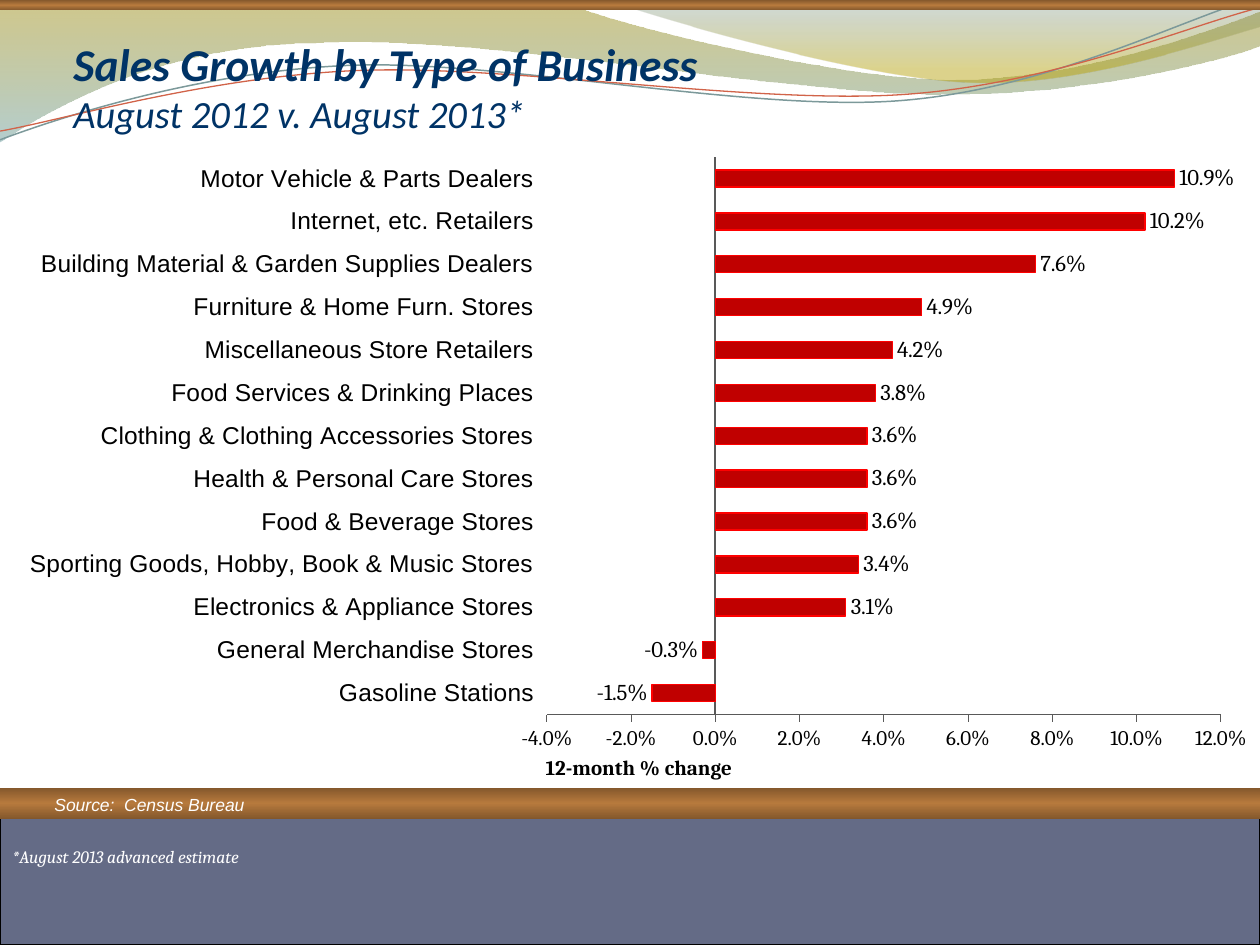
from pptx import Presentation
from pptx.chart.data import CategoryChartData
from pptx.dml.color import RGBColor
from pptx.enum.chart import XL_CHART_TYPE, XL_LABEL_POSITION, XL_TICK_LABEL_POSITION, XL_TICK_MARK
from pptx.enum.shapes import MSO_SHAPE
from pptx.enum.text import MSO_ANCHOR
from pptx.oxml import parse_xml
from pptx.oxml.ns import nsdecls
from pptx.util import Pt

BAR_CLUSTERED = XL_CHART_TYPE.BAR_CLUSTERED
OUTSIDE_END = XL_LABEL_POSITION.OUTSIDE_END
LABELS_LOW = XL_TICK_LABEL_POSITION.LOW
TICK_NONE, TICK_OUT = XL_TICK_MARK.NONE, XL_TICK_MARK.OUTSIDE
RECT = MSO_SHAPE.RECTANGLE
ANCHOR_TOP, ANCHOR_BOTTOM = MSO_ANCHOR.TOP, MSO_ANCHOR.BOTTOM

WHITE = RGBColor(0xFF, 0xFF, 0xFF)
BLACK = RGBColor(0x00, 0x00, 0x00)
NAVY = RGBColor(0x00, 0x33, 0x66)
SLATE = RGBColor(0x64, 0x6B, 0x86)
BROWN = RGBColor(0x83, 0x57, 0x2C)
COPPER = RGBColor(0xB7, 0x7A, 0x3D)
OLIVE = RGBColor(0x97, 0x85, 0x00)
TEAL = RGBColor(0x77, 0xA5, 0xA6)
GREEN_GRAY = RGBColor(0x64, 0x84, 0x84)
GOLD = RGBColor(0xB4, 0x9F, 0x00)
PALE_TEAL = RGBColor(0x7C, 0x99, 0x9A)
CORAL = RGBColor(0xD1, 0x63, 0x49)
DARK_RED = RGBColor(0xC0, 0x00, 0x00)
RED = RGBColor(0xFF, 0x00, 0x00)
AXIS_GRAY = RGBColor(0x59, 0x59, 0x59)

WOOD = [(0, BROWN, 100), (50, COPPER, 100), (100, BROWN, 100)]

# Outlines in points: a pair is a line end, six numbers are a Bezier curve.
WIDE_WAVE = [(0, -0.7), (316.8, -0.7),
             (342.7, 12.2, 478.1, 45.4, 545.8, 45.4),
             (614.2, 45.4, 689.8, 18.7, 720, 6.5), (720.7, 25.9),
             (707.8, 31.7, 626.4, 54.7, 537.1, 54),
             (447.8, 54, 275, 20.2, 185, 24.5),
             (92.9, 25.2, 33.1, 59.8, -0.7, 81.4)]
RIGHT_WAVE = [(344.9, -0.7), (366.5, 7.9, 491, 44.6, 553.7, 46.8),
              (616.3, 49.7, 691.9, 23, 720, 15.1), (720, 0)]
TEAL_THREAD = [(0, 79.9), (34.6, 67, 113.8, 41, 199.4, 37.4),
               (284.4, 33.8, 427, 64.1, 513.4, 57.6),
               (599.8, 51.1, 675.4, 10.8, 718.6, -1.4)]
CORAL_THREAD = [(0, 74.9), (33.8, 69.1, 118.1, 43.9, 203.8, 40.3),
                (290.2, 36.7, 429.8, 59.8, 516.2, 54),
                (601.9, 48.2, 677.5, 15.1, 720, 4.3)]

GROWTH = [
    ("Gasoline Stations", -0.015),
    ("General Merchandise Stores", -0.003),
    ("Electronics & Appliance Stores", 0.031),
    ("Sporting Goods, Hobby, Book & Music Stores", 0.034),
    ("Food & Beverage Stores", 0.036),
    ("Health & Personal Care Stores", 0.036),
    ("Clothing & Clothing Accessories Stores", 0.036),
    ("Food Services & Drinking Places", 0.038),
    ("Miscellaneous Store Retailers", 0.042),
    ("Furniture & Home Furn. Stores", 0.049),
    ("Building Material & Garden Supplies Dealers", 0.076),
    ("Internet, etc. Retailers", 0.102),
    ("Motor Vehicle & Parts Dealers", 0.109),
]


def set_gradient(sp, stops):
    """Fill from top to bottom; stops are (position %, colour, opacity %)."""
    sp.fill.background()
    gs = "".join(
        f'<a:gs pos="{pos * 1000}"><a:srgbClr val="{color}">'
        f'<a:alpha val="{opacity * 1000}"/></a:srgbClr></a:gs>'
        for pos, color, opacity in stops)
    grad = parse_xml(f'<a:gradFill {nsdecls("a")} rotWithShape="1"><a:gsLst>{gs}</a:gsLst>'
                     '<a:lin ang="5400000" scaled="0"/></a:gradFill>')
    no_fill = sp.element.spPr.find("{*}noFill")
    no_fill.getparent().replace(no_fill, grad)


def add_curve(s, outline, close):
    """Draw an outline as straight segments, then merge each curve's three into a Bezier."""
    points = [(Pt(part[i]), Pt(part[i + 1])) for part in outline for i in range(0, len(part), 2)]
    builder = s.shapes.build_freeform(*points[0])
    builder.add_line_segments(points[1:], close=close)
    sp = builder.convert_to_shape()
    sp.shadow.inherit = False
    segments = iter(sp.element.spPr.findall(".//{*}lnTo"))
    for part in outline[1:]:
        first = next(segments)
        if len(part) == 6:
            curve = parse_xml(f'<a:cubicBezTo {nsdecls("a")}/>')
            first.addprevious(curve)
            for segment in (first, next(segments), next(segments)):
                curve.append(segment[0])
                segment.getparent().remove(segment)
    return sp


def add_waves(s):
    for outline, stops in ((WIDE_WAVE, [(0, OLIVE, 45), (100, TEAL, 55)]),
                           (RIGHT_WAVE, [(0, GREEN_GRAY, 30), (80, GOLD, 45)])):
        sp = add_curve(s, outline, True)
        set_gradient(sp, stops)
        sp.line.fill.background()
    for outline, color, width in ((TEAL_THREAD, PALE_TEAL, 0.85),
                                  (CORAL_THREAD, CORAL, 0.75)):
        sp = add_curve(s, outline, False)
        sp.fill.background()
        sp.line.color.rgb = color
        sp.line.width = Pt(width)


def add_band(s, top, height):
    sp = s.shapes.add_shape(RECT, Pt(0), Pt(top), Pt(720), Pt(height))
    sp.shadow.inherit = False
    sp.line.fill.background()
    return sp


def add_bands(s):
    set_gradient(add_band(s, 0, 6), WOOD)
    footer = add_band(s, 462, 78)
    footer.fill.solid()
    footer.fill.fore_color.rgb = SLATE
    footer.line.color.rgb = BLACK
    footer.line.width = Pt(0.75)
    set_gradient(add_band(s, 450, 18), WOOD)


def style_font(font, size, name, color=BLACK, bold=False, italic=False):
    font.size, font.name = Pt(size), name
    font.color.rgb = color
    font.bold, font.italic = bold, italic


def add_layout(element, x, y, w=None, h=None):
    """Place a chart part by fractions of the chart; with a size, it is the inner plot area."""
    sized = w is not None
    target = '<c:layoutTarget val="inner"/>' if sized else ""
    size = f'<c:w val="{w}"/><c:h val="{h}"/>' if sized else ""
    for old in element.findall("{*}layout"):
        element.remove(old)
    layout = parse_xml(f'<c:layout {nsdecls("c")}><c:manualLayout>{target}'
                       '<c:xMode val="edge"/><c:yMode val="edge"/>'
                       f'<c:x val="{x}"/><c:y val="{y}"/>{size}</c:manualLayout></c:layout>')
    element.insert(0 if sized else 1, layout)


def add_growth_chart(s, left, top, width, height):
    data = CategoryChartData(number_format="0.0%")
    data.categories = [name for name, _ in GROWTH]
    data.add_series("Series 1", [value for _, value in GROWTH])
    chart = s.shapes.add_chart(BAR_CLUSTERED, Pt(left), Pt(top), Pt(width), Pt(height), data).chart
    chart.has_legend = chart.has_title = False
    style_font(chart.font, 18, "Cambria")

    cat, val = chart.category_axis, chart.value_axis
    for axis, tick, size, name, line in ((cat, TICK_NONE, 14, "Arial", 1),
                                         (val, TICK_OUT, 12, "Cambria", 0.5)):
        axis.has_major_gridlines = False
        axis.major_tick_mark, axis.minor_tick_mark = tick, TICK_NONE
        axis.format.line.color.rgb = AXIS_GRAY
        axis.format.line.width = Pt(line)
        style_font(axis.tick_labels.font, size, name)
    cat.tick_label_position = LABELS_LOW
    val.minimum_scale, val.maximum_scale, val.major_unit = -0.04, 0.12, 0.02
    val.tick_labels.number_format = "0.0%"
    val.tick_labels.number_format_is_linked = False
    r = val.axis_title.text_frame.paragraphs[0].add_run()
    r.text = "12-month % change"
    style_font(r.font, 12, "Cambria", bold=True)
    add_layout(val.axis_title._element, 0.43, 0.95)

    plot = chart.plots[0]
    plot.gap_width, plot.vary_by_categories = 150, False
    add_layout(chart._chartSpace.chart.plotArea, 0.434, 0.016, 0.535, 0.876)
    bars = plot.series[0]
    bars.invert_if_negative = False
    bars.format.fill.solid()
    bars.format.fill.fore_color.rgb = DARK_RED
    bars.format.line.color.rgb = RED
    bars.format.line.width = Pt(0.75)
    labels = bars.data_labels
    labels.show_value, labels.position = True, OUTSIDE_END
    labels.number_format, labels.number_format_is_linked = "0.0%", False
    style_font(labels.font, 13, "Cambria")


def add_text(s, box, lines, anchor=ANCHOR_TOP):
    """Write lines of (text, size, font, colour, bold), all italic, with breaks between."""
    tf = s.shapes.add_textbox(*map(Pt, box)).text_frame
    tf.word_wrap, tf.vertical_anchor = True, anchor
    p = tf.paragraphs[0]
    for i, (text, size, name, color, bold) in enumerate(lines):
        if i:
            p.add_line_break()
        r = p.add_run()
        r.text = text
        style_font(r.font, size, name, color, bold, True)
    return tf


def add_title(s, box):
    tf = add_text(s, box, [("Sales Growth by Type of Business ", 26, "Calibri", NAVY, True),
                           ("August 2012 v. August 2013*", 22, "Calibri", NAVY, False)],
                  ANCHOR_BOTTOM)
    tf.margin_left = tf.margin_right = tf.margin_bottom = 0


def main():
    prs = Presentation()
    prs.slide_width, prs.slide_height = Pt(720), Pt(540)
    s = prs.slides.add_slide(prs.slide_layouts[6])
    add_waves(s)
    add_bands(s)
    add_growth_chart(s, 0, 84, 720, 366)
    add_title(s, (42, 18, 612, 60))
    add_text(s, (24, 450, 264, 19.4), [("Source:  Census Bureau", 10, "Arial", WHITE, False)])
    add_text(s, (0, 480, 542, 19.4), [("*August 2013 advanced estimate", 10, "Cambria", WHITE, False)])
    prs.save("out.pptx")


if __name__ == "__main__":
    main()
